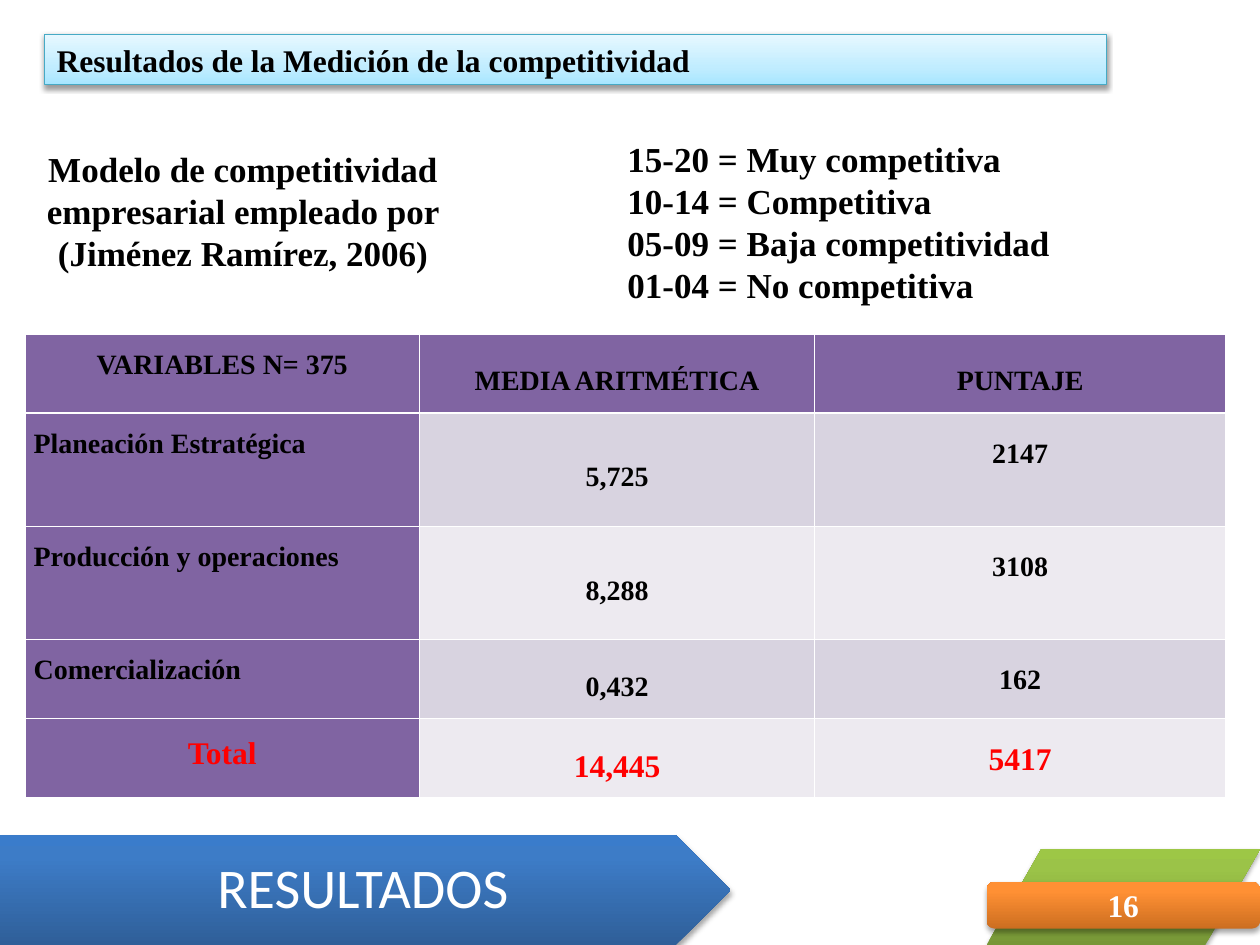
import pptx
import pptx.dml.color
import pptx.enum.shapes
import pptx.enum.text
import pptx.oxml
import pptx.oxml.ns
import pptx.util

Cm = pptx.util.Cm
Pt = pptx.util.Pt
SHAPE = pptx.enum.shapes.MSO_SHAPE
ALIGN = pptx.enum.text.PP_ALIGN
ANCHOR = pptx.enum.text.MSO_ANCHOR

SERIF = "Times New Roman"
COLORS = {
    "text": "000000",
    "light": "FFFFFF",
    "total": "FF0000",
    "title_line": "46AAC5",
    "head": "8064A2",
    "band_dark": "D8D3E0",
    "band_light": "EDEAF0",
}
# Stops run from the bottom edge to the top edge.
GRADIENTS = {
    "title": [(0, "A7E6FF"), (35, "C1EDFF"), (100, "E7F8FF")],
    "blue": [(0, "2F5F99"), (80, "3D7CC7"), (100, "3A7CCB")],
    "green": [(0, "779737"), (80, "9BC348"), (100, "9DC746")],
    "orange": [(0, "CC6E20"), (80, "FF9034"), (100, "FF9136")],
}
COLUMN_WIDTHS = [7.96, 7.96, 8.29]
ROW_HEIGHTS = [1.6, 2.28, 2.28, 1.6, 1.6]
RESULTS = [
    ("VARIABLES N= 375", "MEDIA ARITMÉTICA", "PUNTAJE"),
    ("Planeación Estratégica", "5,725", "2147"),
    ("Producción y operaciones", "8,288", "3108"),
    ("Comercialización", "0,432", "162"),
    ("Total", "14,445", "5417"),
]
SCALE = [
    "15-20 = Muy competitiva",
    "10-14 = Competitiva",
    "05-09 = Baja competitividad",
    "01-04 = No competitiva",
]


def rgb(name):
    return pptx.dml.color.RGBColor.from_string(COLORS[name])


def drawing_xml(xml):
    return pptx.oxml.parse_xml(xml.replace(" ", f" {pptx.oxml.ns.nsdecls('a')} ", 1))


def format_paragraph(paragraph, size, color="text", align=ALIGN.CENTER, font=SERIF, bold=True):
    paragraph.alignment = align
    paragraph.font.name = font
    paragraph.font.size = Pt(size)
    paragraph.font.bold = bold
    paragraph.font.color.rgb = rgb(color)


def apply_relief(shape, gradient, opacity=35, distance=1.8):
    """Fill with a vertical gradient and cast a soft shadow downwards."""
    shape.fill.gradient()
    shape.fill.gradient_angle = 90
    stops = shape.element.spPr.find(".//" + pptx.oxml.ns.qn("a:gsLst"))
    for stop in list(stops):
        stops.remove(stop)
    for position, color in GRADIENTS[gradient]:
        stops.append(drawing_xml(
            f'<a:gs pos="{position * 1000}"><a:srgbClr val="{color}"/></a:gs>'))
    shape.line.fill.background()
    shape.shadow.inherit = False
    effects = shape.element.spPr.find(pptx.oxml.ns.qn("a:effectLst"))
    effects.append(drawing_xml(
        f'<a:outerShdw blurRad="{Pt(3.1)}" dist="{Pt(distance)}" dir="5400000" rotWithShape="0">'
        f'<a:srgbClr val="000000"><a:alpha val="{opacity * 1000}"/></a:srgbClr></a:outerShdw>'))


def add_relief_shape(slide, kind, left, top, width, height, gradient):
    shape = slide.shapes.add_shape(kind, Cm(left), Cm(top), Cm(width), Cm(height))
    apply_relief(shape, gradient)
    return shape


def set_title(slide, text):
    title = slide.shapes.title
    title.left, title.top, title.width, title.height = Cm(0.89), Cm(0.69), Cm(21.41), Cm(1.02)
    apply_relief(title, "title", opacity=38, distance=1.6)
    title.line.color.rgb = rgb("title_line")
    title.line.width = Pt(0.75)
    title.text_frame.text = text
    title.text_frame.vertical_anchor = ANCHOR.TOP
    format_paragraph(title.text_frame.paragraphs[0], 18, align=ALIGN.LEFT)


def add_text(slide, left, top, width, height, lines, align, indent=0.25):
    frame = slide.shapes.add_textbox(Cm(left), Cm(top), Cm(width), Cm(height)).text_frame
    frame.word_wrap = True
    frame.vertical_anchor = ANCHOR.MIDDLE
    frame.margin_left = Cm(indent)
    frame.text = "\n".join(lines)
    for paragraph in frame.paragraphs:
        format_paragraph(paragraph, 20, align=align)


def fill_cell(cell, text, row, column):
    is_header, is_total = row == 0, row == len(RESULTS) - 1
    is_score = column == 2 and not is_header
    is_label = column == 0 and not is_header and not is_total

    cell.text = text
    cell.margin_left = cell.margin_right = Cm(0.18)
    cell.margin_top = cell.margin_bottom = 0
    if is_score and row in (1, 2):
        cell.margin_bottom = Cm(0.68)
    cell.vertical_anchor = ANCHOR.TOP if column == 0 else ANCHOR.MIDDLE
    cell.fill.solid()
    band = "band_dark" if row % 2 else "band_light"
    cell.fill.fore_color.rgb = rgb("head" if is_header or column == 0 else band)

    paragraph = cell.text_frame.paragraphs[0]
    format_paragraph(paragraph, 18 if is_total else 16, "total" if is_total else "text",
                     ALIGN.JUSTIFY if is_label else ALIGN.CENTER)
    paragraph.line_spacing = 1.07 if is_score else 1.5
    if is_header:
        paragraph.space_before = paragraph.space_after = Pt(6)


def add_results_table(slide):
    table = slide.shapes.add_table(
        len(RESULTS), len(COLUMN_WIDTHS), Cm(0.5), Cm(6.73),
        Cm(sum(COLUMN_WIDTHS)), Cm(sum(ROW_HEIGHTS))).table
    for column, width in zip(table.columns, COLUMN_WIDTHS):
        column.width = Cm(width)
    for row, height in zip(table.rows, ROW_HEIGHTS):
        row.height = Cm(height)
    for r, values in enumerate(RESULTS):
        for c, value in enumerate(values):
            fill_cell(table.cell(r, c), value, r, c)


def add_section_arrow(slide, text):
    arrow = add_relief_shape(slide, SHAPE.PENTAGON, 0, 16.84, 14.73, 2.21, "blue")
    frame = arrow.text_frame
    frame.margin_left, frame.margin_right = Cm(0.61), Cm(0.15)
    frame.text = text
    format_paragraph(frame.paragraphs[0], 32, "light", font="Calibri", bold=False)
    frame.paragraphs[0].line_spacing = 0.9


def add_page_badge(slide, number):
    add_relief_shape(slide, SHAPE.FLOWCHART_DATA, 19.89, 17.12, 5.51, 1.93, "green")
    badge = add_relief_shape(slide, SHAPE.ROUNDED_RECTANGLE, 19.89, 17.78, 5.51, 0.94, "orange")
    badge.text_frame.text = number
    format_paragraph(badge.text_frame.paragraphs[0], 18, "light")


def main():
    deck = pptx.Presentation()
    deck.slide_width, deck.slide_height = Cm(25.4), Cm(19.05)
    slide = deck.slides.add_slide(deck.slide_layouts[5])

    set_title(slide, "Resultados de la Medición de la competitividad")
    add_section_arrow(slide, "RESULTADOS")
    add_page_badge(slide, "16")
    add_results_table(slide)
    add_text(slide, 0.48, 2.84, 8.84, 2.82,
             ["Modelo de competitividad empresarial empleado por (Jiménez Ramírez, 2006)"],
             ALIGN.CENTER)
    add_text(slide, 11.13, 2.62, 10.77, 3.68, SCALE, ALIGN.JUSTIFY, indent=1.52)
    deck.save("out.pptx")


if __name__ == "__main__":
    main()
